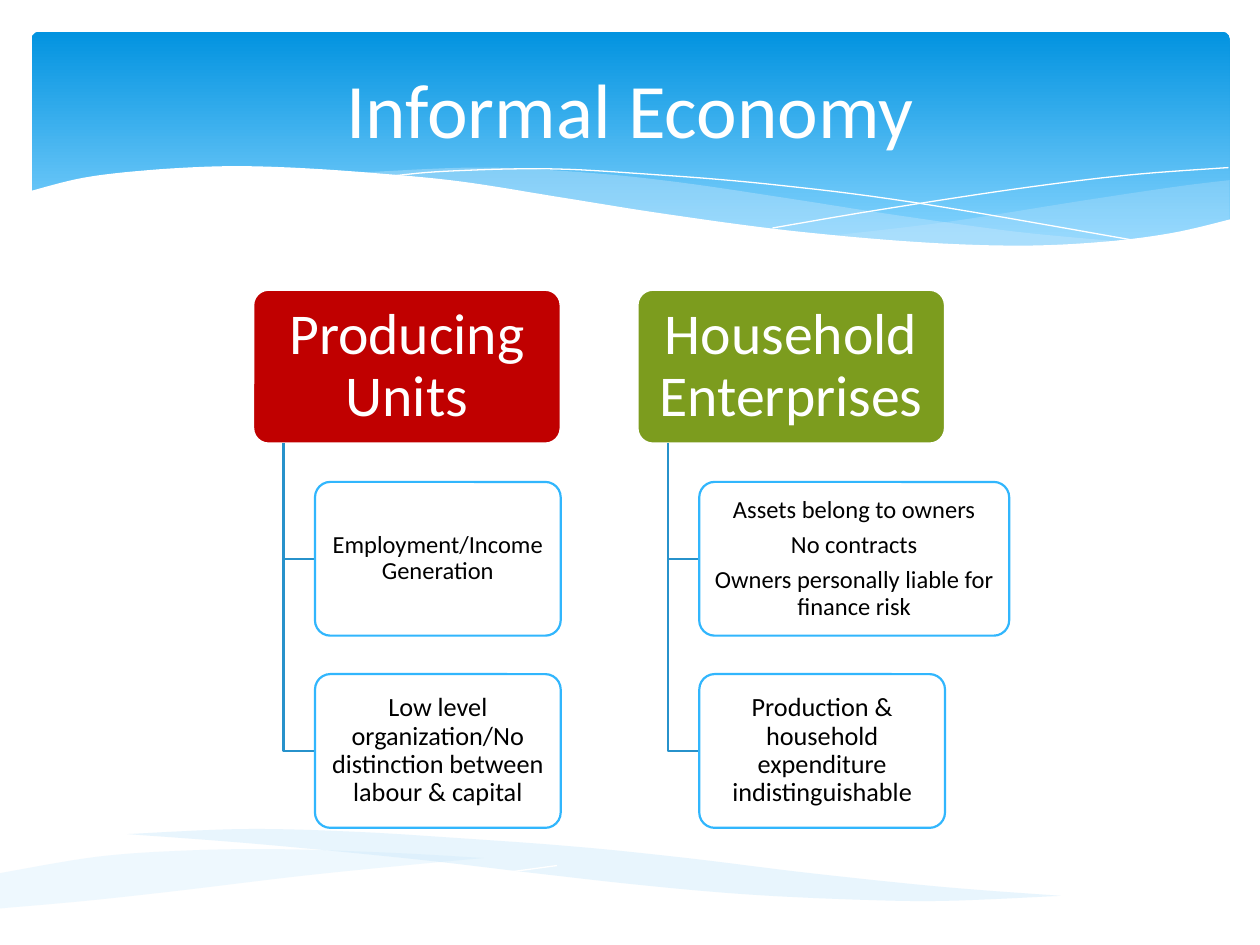
"""Build the Informal Economy slide with its wave band and two branches."""
from lxml.etree import SubElement
from pptx import Presentation
from pptx.dml.color import RGBColor
from pptx.enum.shapes import MSO_SHAPE
from pptx.enum.text import MSO_ANCHOR, PP_ALIGN
from pptx.oxml.ns import qn
from pptx.util import Inches, Pt

COLORS = {
    "white": "FFFFFF", "black": "000000", "band_top": "0293E0", "band_bottom": "83D3FE",
    "wave": "C6E7FC", "red": "C00000", "green": "7C9C1E", "border": "31B6FD", "branch": "2792CB",
}

BAND_WAVES = [
    (29, [[(9.76, 1.43), (9.35, 1.48), (8.61, 1.59), (7.53, 1.76), (6.61, 1.87)],
          [(6.61, 1.87), (7.19, 1.92), (8.03, 1.96), (8.97, 1.91), (9.76, 1.75)]]),
    (40, [[(8.93, 1.92), (8.07, 1.84), (7.06, 1.7), (6.29, 1.58), (5.41, 1.45), (4.65, 1.37),
           (3.8, 1.33), (2.86, 1.37)],
          [(2.86, 1.37), (3.62, 1.45), (4.49, 1.58), (5.66, 1.76), (6.8, 1.89), (7.61, 1.95),
           (8.28, 1.96), (8.93, 1.92)]]),
]
BAND_STREAKS = [
    [(3.09, 1.4), (3.53, 1.36), (4.33, 1.34), (5.1, 1.38), (6.08, 1.46), (7.27, 1.61), (9.07, 1.92)],
    [(6.13, 1.81), (6.95, 1.67), (8.06, 1.5), (8.95, 1.39), (9.75, 1.33)],
]
BAND_EDGE = [
    [(9.77, 1.74), (9.3, 1.85), (8.75, 1.92), (8.09, 1.95), (7.26, 1.92), (6.26, 1.83),
     (5.29, 1.7), (4.47, 1.57), (3.65, 1.44), (2.92, 1.37), (2.3, 1.33), (1.77, 1.32),
     (1.19, 1.35), (0.67, 1.41), (0.23, 1.52)],
    [(0.23, 2.3), (9.77, 2.3)],
]
FOOT_WAVE = [
    [(1.01, 6.62), (2.06, 6.7), (3.3, 6.82), (4.24, 6.93), (5.14, 7.03), (5.95, 7.1),
     (6.79, 7.14), (7.5, 7.15), (8.42, 7.11)],
    [(8.42, 7.11), (7.49, 7.04), (6.43, 6.93), (5.45, 6.81), (4.57, 6.72), (3.61, 6.65),
     (2.78, 6.6), (1.93, 6.58), (1.01, 6.62)],
]
FOOT_STREAKS = [
    [(8.14, 7.24), (7.61, 7.28), (6.63, 7.29), (5.41, 7.25), (4.15, 7.16), (2.63, 7.01), (0.84, 6.78)],
    [(4.42, 6.87), (3.43, 7), (2.07, 7.15), (0.98, 7.25), (0.01, 7.3)],
]
FOOT_CORNER = [
    [(0, 7.21), (0.68, 7.15), (1.41, 7.07), (2.41, 6.95), (3.3, 6.86), (3.84, 6.81)],
    [(3.84, 6.81), (3.14, 6.77), (2.24, 6.74), (1.49, 6.75), (0.77, 6.8), (0, 6.93)],
]

BRANCHES = [
    (2.01, "red", "Producing Units", [
        (1.95, 14, ["Employment/Income Generation"]),
        (1.95, 15, ["Low level organization/No distinction between labour & capital"])]),
    (5.06, "green", "Household Enterprises", [
        (2.46, 14, ["Assets belong to owners", "No contracts",
                    "Owners personally liable for finance risk"]),
        (1.95, 15, ["Production & household expenditure indistinguishable"])]),
]
TOP, BOX_HEIGHT, STEP = 2.3, 1.22, 1.525


def rgb(name):
    """Return the named colour."""
    return RGBColor.from_string(COLORS[name])


def smooth(knots, steps=8):
    """Return points on a Catmull-Rom curve through the knots."""
    if len(knots) < 3:
        return knots
    padded = [knots[0], *knots, knots[-1]]
    points = []
    for a, b, c, d in zip(padded, padded[1:], padded[2:], padded[3:]):
        for t in (step / steps for step in range(steps)):
            points.append(tuple(
                (2 * q + (r - p) * t + (2 * p - 5 * q + 4 * r - s) * t ** 2
                 + (3 * q - p - 3 * r + s) * t ** 3) / 2
                for p, q, r, s in zip(a, b, c, d)))
    return points + [knots[-1]]


class Deck:
    """Holds the style and the current slide."""

    font = "Calibri"

    def __init__(self):
        """Start a presentation with one title-only slide."""
        self.presentation = Presentation()
        self.presentation.slide_width = Inches(10)
        self.presentation.slide_height = Inches(7.5)
        self.slide = self.presentation.slides.add_slide(self.presentation.slide_layouts[5])

    def paint(self, shape, fill=None, alpha=100, line=None, width=1.25):
        """Set fill, line and shadow of a shape."""
        shape.shadow.inherit = False
        if fill:
            shape.fill.solid()
            shape.fill.fore_color.rgb = rgb(fill)
            if alpha < 100:
                color = shape.element.spPr.find(qn("a:solidFill"))[0]
                SubElement(color, qn("a:alpha")).set("val", str(alpha * 1000))
        else:
            shape.fill.background()
        if line:
            shape.line.color.rgb = rgb(line)
            shape.line.width = Pt(width)
        else:
            shape.line.fill.background()

    def set_text(self, frame, paragraphs, size, color):
        """Fill a text frame with centred paragraphs."""
        frame.word_wrap = True
        frame.vertical_anchor = MSO_ANCHOR.MIDDLE
        frame.text = "\n".join(paragraphs)
        for paragraph in frame.paragraphs:
            paragraph.alignment = PP_ALIGN.CENTER
            paragraph.font.name = self.font
            paragraph.font.size = Pt(size)
            paragraph.font.color.rgb = rgb(color)

    def title(self, text):
        """Place the title in front of the band."""
        title = self.slide.shapes.title
        title.left, title.top, title.width, title.height = map(Inches, (0.5, 0.17, 9, 1.37))
        self.set_text(title.text_frame, [text], 44, "white")
        title.element.getparent().append(title.element)

    def rounded(self, left, top, width, height, corner):
        """Add a rounded rectangle."""
        shape = self.slide.shapes.add_shape(
            MSO_SHAPE.ROUNDED_RECTANGLE, *map(Inches, (left, top, width, height)))
        shape.adjustments[0] = corner
        return shape

    def band(self):
        """Add the gradient band behind the title."""
        band = self.rounded(0.25, 0.25, 9.51, 1.82, 0.034)
        self.paint(band)
        band.fill.gradient()
        band.fill.gradient_angle = 270
        for stop, position, color in zip(band.fill.gradient_stops, (0, 0.9), ("band_top", "band_bottom")):
            stop.position = position
            stop.color.rgb = rgb(color)

    def outline(self, points, close, **style):
        """Add a freeform through the points."""
        start, *rest = [(Inches(x), Inches(y)) for x, y in points]
        builder = self.slide.shapes.build_freeform(*start)
        builder.add_line_segments(rest, close=close)
        self.paint(builder.convert_to_shape(), **style)

    def wave(self, edges, fill, alpha=100):
        """Add a filled wave bounded by smooth edges."""
        self.outline([point for edge in edges for point in smooth(edge)], True, fill=fill, alpha=alpha)

    def streak(self, knots):
        """Add a white hairline curve."""
        self.outline(smooth(knots), False, line="white", width=0)

    def box(self, left, top, width, paragraphs, size, color, insets, **style):
        """Add a rounded box with text."""
        box = self.rounded(left, top, width, BOX_HEIGHT, 0.1)
        self.paint(box, **style)
        frame = box.text_frame
        frame.margin_left = frame.margin_right = Inches(insets[0])
        frame.margin_top = frame.margin_bottom = Inches(insets[1])
        self.set_text(frame, paragraphs, size, color)
        for paragraph in frame.paragraphs:
            paragraph.line_spacing = 0.9
            paragraph.space_after = Pt(round(0.35 * size))

    def branch(self, left, color, heading, children):
        """Add a heading box with its child boxes and connecting lines."""
        self.box(left, TOP, 2.44, [heading], 33, "white", (0.1, 0.08), fill=color, line="white")
        trunk, child_left, bottom = left + 0.24, left + 0.49, TOP + BOX_HEIGHT
        for row, (width, size, paragraphs) in enumerate(children, 1):
            top = TOP + row * STEP
            middle = top + BOX_HEIGHT / 2
            self.outline([(trunk, bottom), (trunk, middle), (child_left, middle)], False, line="branch")
            self.box(child_left, top, width, paragraphs, size, "black", (0.07, 0.06),
                     fill="white", alpha=90, line="border")


def main():
    """Draw the slide and save it."""
    deck = Deck()
    deck.band()
    for alpha, edges in BAND_WAVES:
        deck.wave(edges, "wave", alpha)
    for knots in BAND_STREAKS:
        deck.streak(knots)
    deck.wave(BAND_EDGE, "white")
    deck.wave(FOOT_WAVE, "wave", 40)
    for knots in FOOT_STREAKS:
        deck.streak(knots)
    deck.wave(FOOT_CORNER, "wave", 29)
    for branch in BRANCHES:
        deck.branch(*branch)
    deck.title("Informal Economy")
    deck.presentation.save("out.pptx")


if __name__ == "__main__":
    main()
